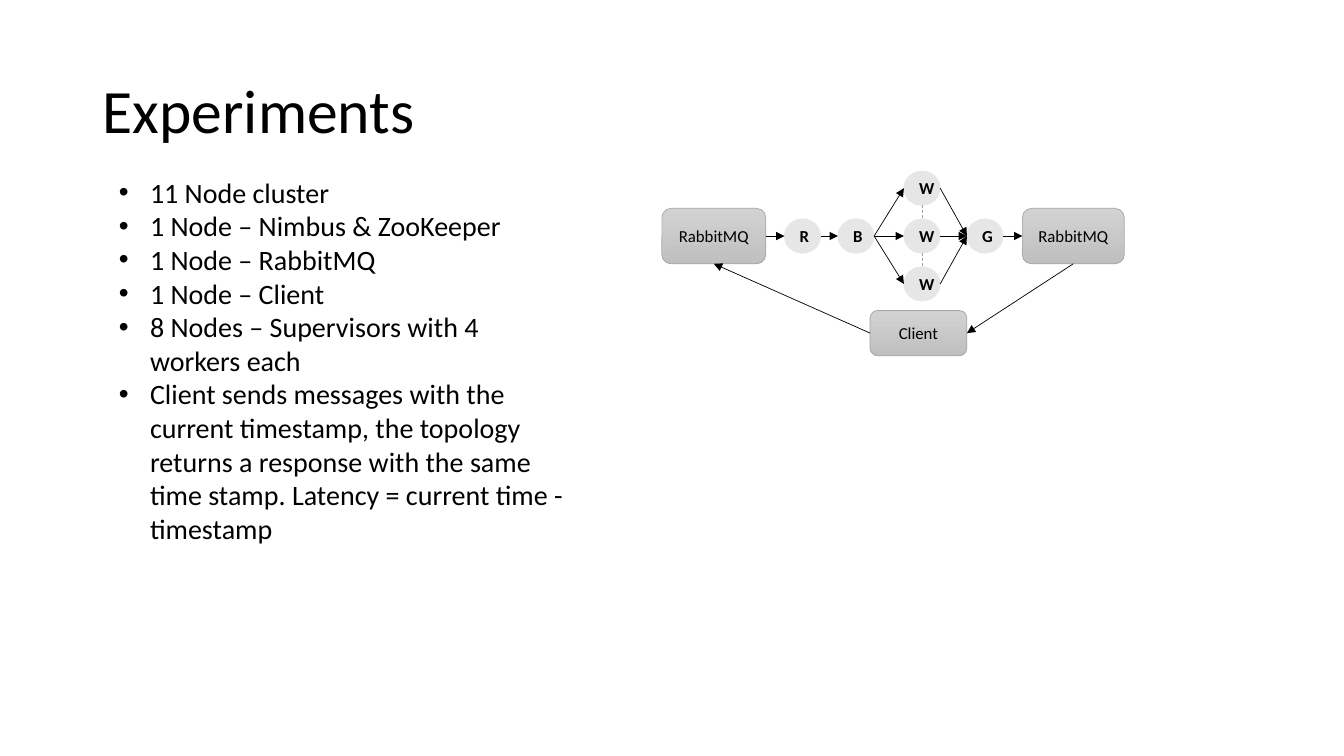
"""Build the Experiments slide: cluster notes beside a message topology."""
from lxml.etree import SubElement
from pptx import Presentation
from pptx.dml.color import RGBColor
from pptx.enum.dml import MSO_LINE_DASH_STYLE as Dash
from pptx.enum.shapes import MSO_CONNECTOR as Connector, MSO_SHAPE as Shape
from pptx.enum.text import MSO_ANCHOR as Anchor, MSO_AUTO_SIZE as AutoSize, PP_ALIGN as Align
from pptx.oxml.ns import qn
from pptx.util import Inches, Pt

SLIDE_SIZE = (13.33, 7.5)
TITLE = "Experiments"
TITLE_AREA = (0.92, 0.4, 11.5, 1.45)
NOTES_AREA = (1.08, 1.69, 4.7, 3.8)
NOTES = [
    "11 Node cluster",
    "1 Node – Nimbus & ZooKeeper",
    "1 Node – RabbitMQ",
    "1 Node – Client",
    "8 Nodes – Supervisors with 4 workers each",
    "Client sends messages with the current timestamp, the topology returns "
    "a response with the same time stamp. Latency = current time - timestamp",
]
INDENT = 0.31

COLUMNS = {"input": 7.08, "R": 7.96, "B": 8.49, "client": 9.11,
           "W": 9.145, "G": 9.77, "output": 10.645}
MIDDLE_ROW, ROW_GAP = 2.342, 0.475
CLIENT_ROW = 3.305
CIRCLE = (0.36, 0.34)
CIRCLES = {
    "reader": ("R", 0), "broker": ("B", 0), "gather": ("G", 0),
    "worker top": ("W", -1), "worker middle": ("W", 0), "worker bottom": ("W", 1),
}
BOXES = {
    "input": ("RabbitMQ", MIDDLE_ROW, (1.03, 0.55)),
    "output": ("RabbitMQ", MIDDLE_ROW, (1.01, 0.55)),
    "client": ("Client", CLIENT_ROW, (0.96, 0.45)),
}
WORKERS = ["worker top", "worker middle", "worker bottom"]
TOP, LEFT, BOTTOM, RIGHT = range(4)
ARROWS = [
    ("input", RIGHT, "reader", LEFT),
    ("reader", RIGHT, "broker", LEFT),
    *[("broker", RIGHT, worker, LEFT) for worker in WORKERS],
    *[(worker, RIGHT, "gather", LEFT) for worker in WORKERS],
    ("gather", RIGHT, "output", LEFT),
    ("client", LEFT, "input", BOTTOM),
    ("output", BOTTOM, "client", RIGHT),
]
DASHES = [(upper, BOTTOM, lower, TOP) for upper, lower in zip(WORKERS, WORKERS[1:])]

BLACK, CIRCLE_GREY, EDGE_GREY = "000000", "E7E6E6", "A5A5A5"
BOX_GRADIENT = ("D2D2D2", "C0C0C0")
TITLE_FONT = {"name": "Calibri", "size": Pt(44)}
NOTE_FONT = {"name": "Calibri", "size": Pt(20)}
BOX_FONT = {"name": "Calibri", "size": Pt(12), "bold": False}
CIRCLE_FONT = BOX_FONT | {"bold": True}


def color(value):
    return RGBColor.from_string(value)


def format_font(font, values):
    for name, value in values.items():
        setattr(font, name, value)
    font.color.rgb = color(BLACK)


def format_line(line, value):
    line.color.rgb = color(value)
    line.width = Pt(0.5)


def add_title(slide):
    title = slide.shapes.title
    for name, value in zip(("left", "top", "width", "height"), TITLE_AREA):
        setattr(title, name, Inches(value))
    frame = title.text_frame
    frame.text = TITLE
    frame.vertical_anchor = Anchor.MIDDLE
    paragraph = frame.paragraphs[0]
    paragraph.alignment = Align.LEFT
    paragraph.line_spacing = 0.9
    format_font(paragraph.font, TITLE_FONT)


def add_notes(slide):
    frame = slide.shapes.add_textbox(*map(Inches, NOTES_AREA)).text_frame
    frame.word_wrap = True
    frame.auto_size = AutoSize.SHAPE_TO_FIT_TEXT
    frame.text = "\n".join(NOTES)
    for paragraph in frame.paragraphs:
        properties = paragraph._p.get_or_add_pPr()
        properties.set("marL", str(Inches(INDENT)))
        properties.set("indent", str(-Inches(INDENT)))
        SubElement(properties, qn("a:buFont"), typeface="Arial")
        SubElement(properties, qn("a:buChar"), char="•")
        format_font(paragraph.font, NOTE_FONT)


def add_node(shapes, preset, text, center, size, font, edge):
    corner = [middle - length / 2 for middle, length in zip(center, size)]
    shape = shapes.add_shape(preset, *map(Inches, (*corner, *size)))
    shape.shadow.inherit = False
    format_line(shape.line, edge)
    shape.text_frame.text = text
    shape.text_frame.vertical_anchor = Anchor.MIDDLE
    paragraph = shape.text_frame.paragraphs[0]
    paragraph.alignment = Align.CENTER
    format_font(paragraph.font, font)
    return shape


def add_nodes(shapes):
    nodes = {}
    for name, (text, row) in CIRCLES.items():
        center = (COLUMNS[text], MIDDLE_ROW + row * ROW_GAP)
        shape = add_node(shapes, Shape.OVAL, text, center, CIRCLE, CIRCLE_FONT, CIRCLE_GREY)
        shape.fill.solid()
        shape.fill.fore_color.rgb = color(CIRCLE_GREY)
        nodes[name] = shape
    for name, (text, row, size) in BOXES.items():
        center = (COLUMNS[name], row)
        shape = add_node(shapes, Shape.ROUNDED_RECTANGLE, text, center, size, BOX_FONT, EDGE_GREY)
        shape.fill.gradient()
        shape.fill.gradient_angle = 270
        for stop, value in zip(shape.fill.gradient_stops, BOX_GRADIENT):
            stop.color.rgb = color(value)
        nodes[name] = shape
    return nodes


def side_point(shape, side):
    across, down = {TOP: (1, 0), LEFT: (0, 1), BOTTOM: (1, 2), RIGHT: (2, 1)}[side]
    return shape.left + shape.width * across // 2, shape.top + shape.height * down // 2


def add_link(shapes, nodes, link, value):
    start, start_side, end, end_side = link
    points = side_point(nodes[start], start_side) + side_point(nodes[end], end_side)
    connector = shapes.add_connector(Connector.STRAIGHT, *points)
    if start in BOXES:
        connector.begin_connect(nodes[start], start_side)
    if end in BOXES:
        connector.end_connect(nodes[end], end_side)
    format_line(connector.line, value)
    SubElement(connector._element.spPr, qn("a:effectLst"))
    return connector.line


def add_topology(slide):
    shapes = slide.shapes.add_group_shape().shapes
    nodes = add_nodes(shapes)
    for link in DASHES:
        add_link(shapes, nodes, link, EDGE_GREY).dash_style = Dash.DASH
    for link in ARROWS:
        line = add_link(shapes, nodes, link, BLACK)
        SubElement(line._get_or_add_ln(), qn("a:tailEnd"), type="triangle")


def main():
    presentation = Presentation()
    presentation.slide_width, presentation.slide_height = map(Inches, SLIDE_SIZE)
    slide = presentation.slides.add_slide(presentation.slide_layouts[5])
    add_title(slide)
    add_topology(slide)
    add_notes(slide)
    presentation.save("out.pptx")


if __name__ == "__main__":
    main()
